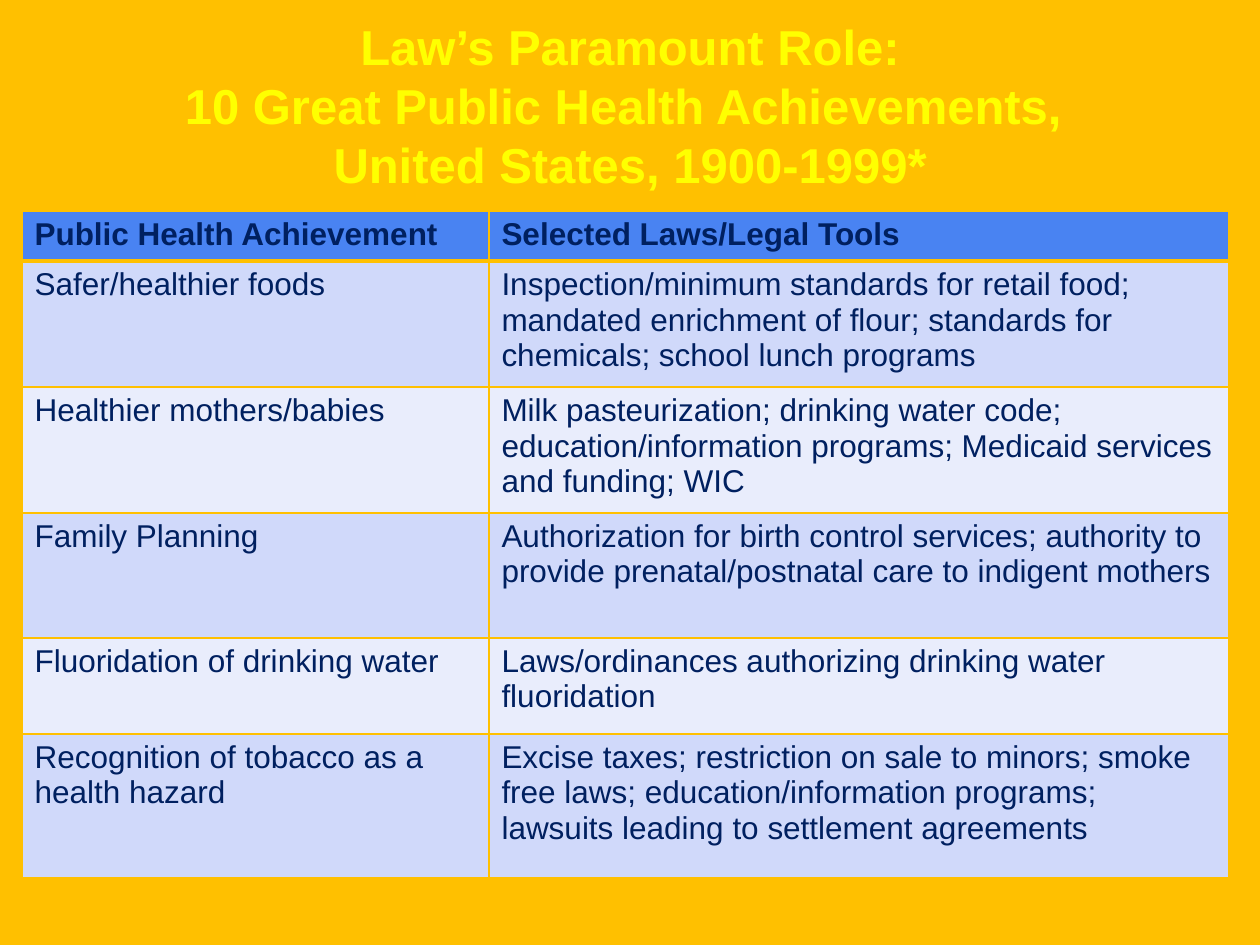
"""Build the slide on law's role in public health achievements."""
from lxml.etree import SubElement as Sub
from pptx import Presentation
from pptx.dml.color import RGBColor
from pptx.enum.text import MSO_ANCHOR as Anchor, PP_ALIGN as Align
from pptx.oxml.ns import qn
from pptx.util import Pt

PX = 914400 // 126
GOLD = "FFC000"


def tint(code):
    return RGBColor.from_string(code)


def write(para, text, size, code, bold):
    run = para.add_run()
    run.text = text
    font = run.font
    font.name, font.size, font.bold = "Arial", Pt(size), bold
    font.color.rgb = tint(code)


deck = Presentation()
deck.slide_width, deck.slide_height = 1260 * PX, 945 * PX
slide = deck.slides.add_slide(deck.slide_layouts[5])
back = slide.background.fill
back.solid()
back.fore_color.rgb = tint(GOLD)

title = slide.shapes.title
title.left, title.top, title.width, title.height = [n * PX for n in (63, 10, 1134, 110)]
frame = title.text_frame
frame.word_wrap = True
frame.vertical_anchor = Anchor.TOP
para = frame.paragraphs[0]
para.alignment = Align.CENTER
para.line_spacing = Pt(33.7)
lines = ["Law’s Paramount Role:", "10 Great Public Health Achievements, ", "United States, 1900-1999*"]
for i, line in enumerate(lines):
    if i:
        para.add_line_break()
    write(para, line, 28, "FFFF00", True)

rows = [
    (50, "Public Health Achievement", "Selected Laws/Legal Tools"),
    (126, "Safer/healthier foods",
     "Inspection/minimum standards for retail food; mandated enrichment of flour; "
     "standards for chemicals; school lunch programs"),
    (126, "Healthier mothers/babies",
     "Milk pasteurization; drinking water code; education/information programs; "
     "Medicaid services and funding; WIC"),
    (125, "Family Planning",
     "Authorization for birth control services; authority to provide "
     "prenatal/postnatal care to indigent mothers"),
    (96, "Fluoridation of drinking water",
     "Laws/ordinances authorizing drinking water fluoridation"),
    (144, "Recognition of tobacco as a health hazard",
     "Excise taxes; restriction on sale to minors; smoke free laws; "
     "education/information programs; lawsuits leading to settlement agreements"),
]
cols = [467, 740]
high = sum(row[0] for row in rows)
table = slide.shapes.add_table(len(rows), len(cols), 22 * PX, 211 * PX, sum(cols) * PX, high * PX).table
for col, wide in zip(table.columns, cols):
    col.width = wide * PX

for i, (tall, *texts) in enumerate(rows):
    table.rows[i].height = tall * PX
    shade = ("E9EDFC", "D0D9FA")[i % 2] if i else "4983F2"
    for j, text in enumerate(texts):
        cell = table.cell(i, j)
        write(cell.text_frame.paragraphs[0], text, 18, "002060", i == 0)
        props = cell._tc.get_or_add_tcPr()
        for side in ("L", "R", "T", "B"):
            thick = 3 if (i, side) in ((0, "B"), (1, "T")) else 1
            edge = Sub(props, qn("a:ln" + side), w=str(Pt(thick)))
            Sub(Sub(edge, qn("a:solidFill")), qn("a:srgbClr"), val=GOLD)
        cell.fill.solid()
        cell.fill.fore_color.rgb = tint(shade)

deck.save("out.pptx")
